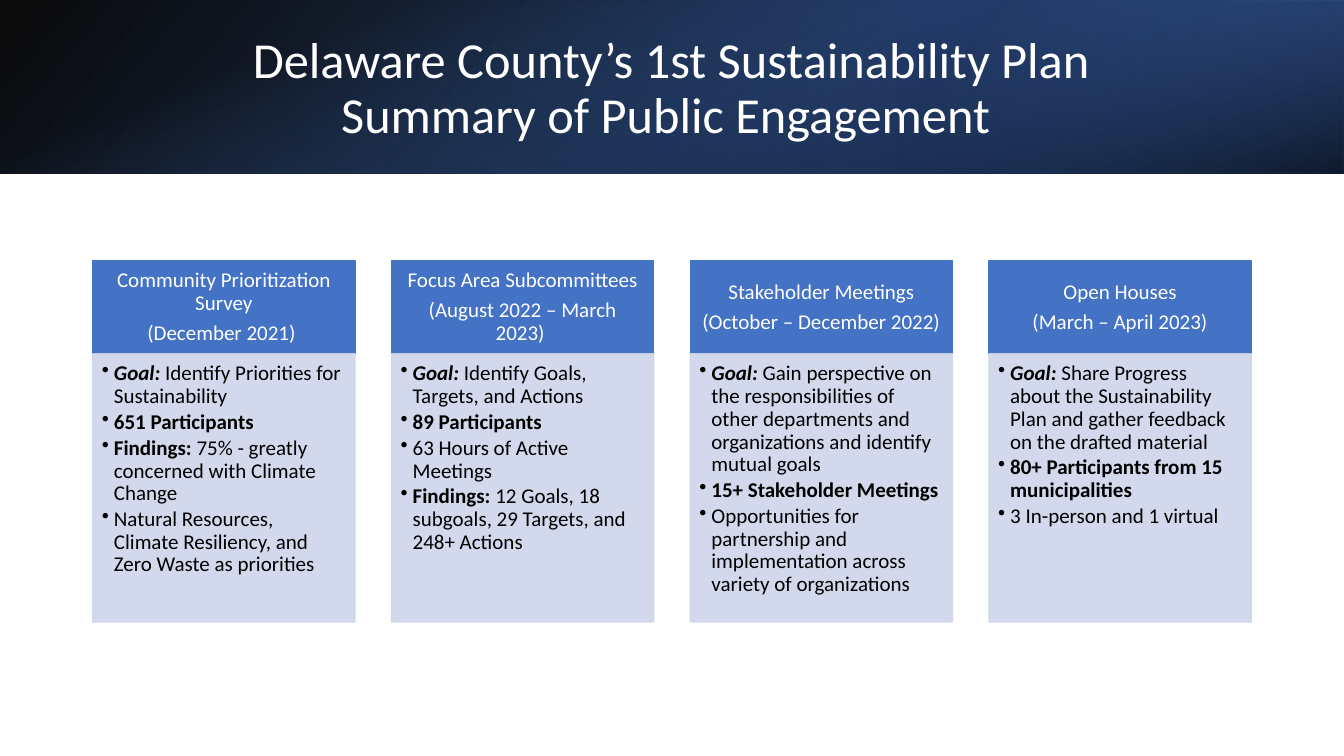
from lxml.etree import SubElement
from pptx import Presentation
from pptx.dml.color import RGBColor
from pptx.enum.shapes import MSO_SHAPE
from pptx.enum.text import MSO_ANCHOR, MSO_AUTO_SIZE, PP_ALIGN
from pptx.oxml.ns import qn
from pptx.util import Inches, Pt

BLUE, PALE, WHITE, BLACK = "4472C4", "CFD5EA", "FFFFFF", "000000"

CARDS = [
    (["Community Prioritization Survey", "(December 2021) "],
     [[("Goal: ", "bi"), ("Identify Priorities for Sustainability", "")],
      [("651 Participants", "b")],
      [("Findings: ", "b"), ("75% - greatly concerned with Climate Change", "")],
      [("Natural Resources, Climate Resiliency, and Zero Waste as priorities", "")]]),
    (["Focus Area Subcommittees", "(August 2022 – March 2023) "],
     [[("Goal: ", "bi"), ("Identify Goals, Targets, and Actions", "")],
      [("89 Participants", "b")],
      [("63 Hours of Active Meetings", "")],
      [("Findings: ", "b"), ("12 Goals, 18 subgoals, 29 Targets, and 248+ Actions", "")]]),
    (["Stakeholder Meetings", "(October – December 2022)"],
     [[("Goal: ", "bi"), ("Gain perspective on the responsibilities of other departments "
                          "and organizations and identify mutual goals", "")],
      [("15+ Stakeholder Meetings", "b")],
      [("Opportunities for partnership and implementation across variety of organizations", "")]]),
    (["Open Houses", "(March – April 2023)"],
     [[("Goal: ", "bi"), ("Share Progress about the Sustainability Plan and gather feedback "
                          "on the drafted material", "")],
      [("80+ Participants from 15 municipalities", "b")],
      [("3 In-person and 1 virtual", "")]]),
]


def color(code):
    return RGBColor.from_string(code)


class Deck:
    """Holds the text style and the current slide."""

    def __init__(self, font, size):
        self.font, self.size = font, size
        self.prs = Presentation()
        self.prs.slide_width, self.prs.slide_height = Inches(13.33), Inches(7.5)
        self.slide = self.prs.slides.add_slide(self.prs.slide_layouts[5])

    def rect(self, box):
        shape = self.slide.shapes.add_shape(MSO_SHAPE.RECTANGLE, *map(Inches, box))
        shape.shadow.inherit = False
        return shape

    def fade(self, box, stops, angle, turn=0, flip=False):
        shape = self.rect(box)
        shape.rotation = turn
        shape.line.fill.background()
        props = shape._element.spPr
        if flip:
            props.find(qn("a:xfrm")).set("flipH", "1")
        shape.fill.gradient()
        grad = props.find(qn("a:gradFill"))
        for part in list(grad):
            grad.remove(part)
        row = SubElement(grad, qn("a:gsLst"))
        for place, code, alpha in stops:
            stop = SubElement(row, qn("a:gs"), pos=str(place * 1000))
            tint = SubElement(stop, qn("a:srgbClr"), val=code)
            SubElement(tint, qn("a:alpha"), val=str(alpha * 1000))
        SubElement(grad, qn("a:lin"), ang=str(angle * 60000), scaled="0")

    def run(self, para, text, code, style="", size=None):
        run = para.add_run()
        run.text = text
        font = run.font
        font.name, font.size = self.font, Pt(size or self.size)
        font.bold, font.italic = "b" in style, "i" in style
        font.color.rgb = color(code)

    def title(self, lines, box):
        shape = self.slide.shapes.title
        shape.left, shape.top, shape.width, shape.height = map(Inches, box)
        frame = shape.text_frame
        frame.auto_size = MSO_AUTO_SIZE.NONE
        frame.vertical_anchor = MSO_ANCHOR.MIDDLE
        para = frame.paragraphs[0]
        para.alignment, para.line_spacing = PP_ALIGN.CENTER, 0.9
        for num, line in enumerate(lines):
            if num:
                para.add_line_break()
            self.run(para, line, WHITE, size=36)

    def panel(self, box, fill, pads, anchor, alpha=100):
        shape = self.rect(box)
        shape.fill.solid()
        shape.fill.fore_color.rgb = color(fill)
        shape.line.color.rgb = color(fill)
        shape.line.width = Pt(1)
        if alpha < 100:
            for tint in list(shape._element.spPr.iter(qn("a:srgbClr"))):
                SubElement(tint, qn("a:alpha"), val=str(alpha * 1000))
        frame = shape.text_frame
        frame.word_wrap, frame.vertical_anchor = True, anchor
        (frame.margin_left, frame.margin_top,
         frame.margin_right, frame.margin_bottom) = map(Inches, pads)
        return frame

    def paras(self, frame, count, align, after):
        for num in range(count):
            para = frame.add_paragraph() if num else frame.paragraphs[0]
            para.alignment, para.line_spacing = align, 0.9
            para.space_after = Pt(after)
            yield para

    def head(self, box, lines):
        frame = self.panel(box, BLUE, (0.12, 0.07, 0.12, 0.07), MSO_ANCHOR.MIDDLE)
        for para, line in zip(self.paras(frame, len(lines), PP_ALIGN.CENTER, 5.25), lines):
            self.run(para, line, WHITE)

    def body(self, box, items):
        frame = self.panel(box, PALE, (0.09, 0.09, 0.12, 0.13), MSO_ANCHOR.TOP, 90)
        for para, item in zip(self.paras(frame, len(items), PP_ALIGN.LEFT, 2.25), items):
            para.level = 1
            props = para._p.get_or_add_pPr()
            props.set("marL", str(Inches(0.12)))
            props.set("indent", str(-Inches(0.12)))
            SubElement(props, qn("a:buChar"), char="•")
            for text, style in item:
                self.run(para, text, BLACK, style)


def main():
    deck = Deck("Calibri", 15)
    deck.fade((0, 0, 13.33, 1.72), [(0, BLACK, 96), (100, "2F5597", 100)], 140, flip=True)
    deck.fade((8.89, 0, 4.44, 1.72), [(19, "203864", 68), (100, BLUE, 79)], 320, 180, True)
    deck.fade((5.8, -5.8, 1.72, 13.33), [(23, BLUE, 0), (99, BLACK, 74)], 340, 90)
    tree = deck.slide.shapes._spTree
    tree.append(deck.slide.shapes.title._element)
    deck.title(["Delaware County’s 1st Sustainability Plan",
                "Summary of Public Engagement "], (1.17, 0.41, 10.98, 0.96))
    for num, (lines, items) in enumerate(CARDS):
        left = 0.92 + num * 2.963
        deck.head((left, 2.59, 2.6, 0.92), lines)
        deck.body((left, 3.51, 2.6, 2.66), items)
    deck.prs.save("out.pptx")


if __name__ == "__main__":
    main()
